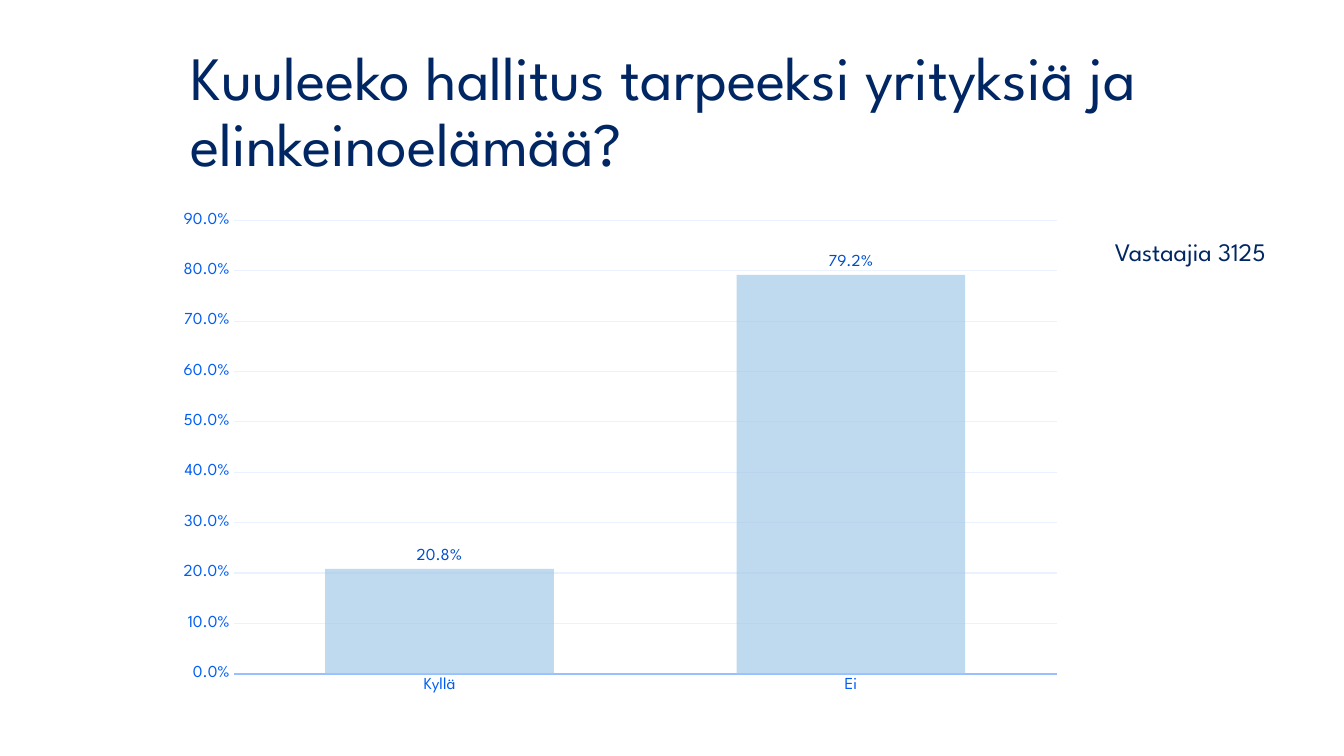
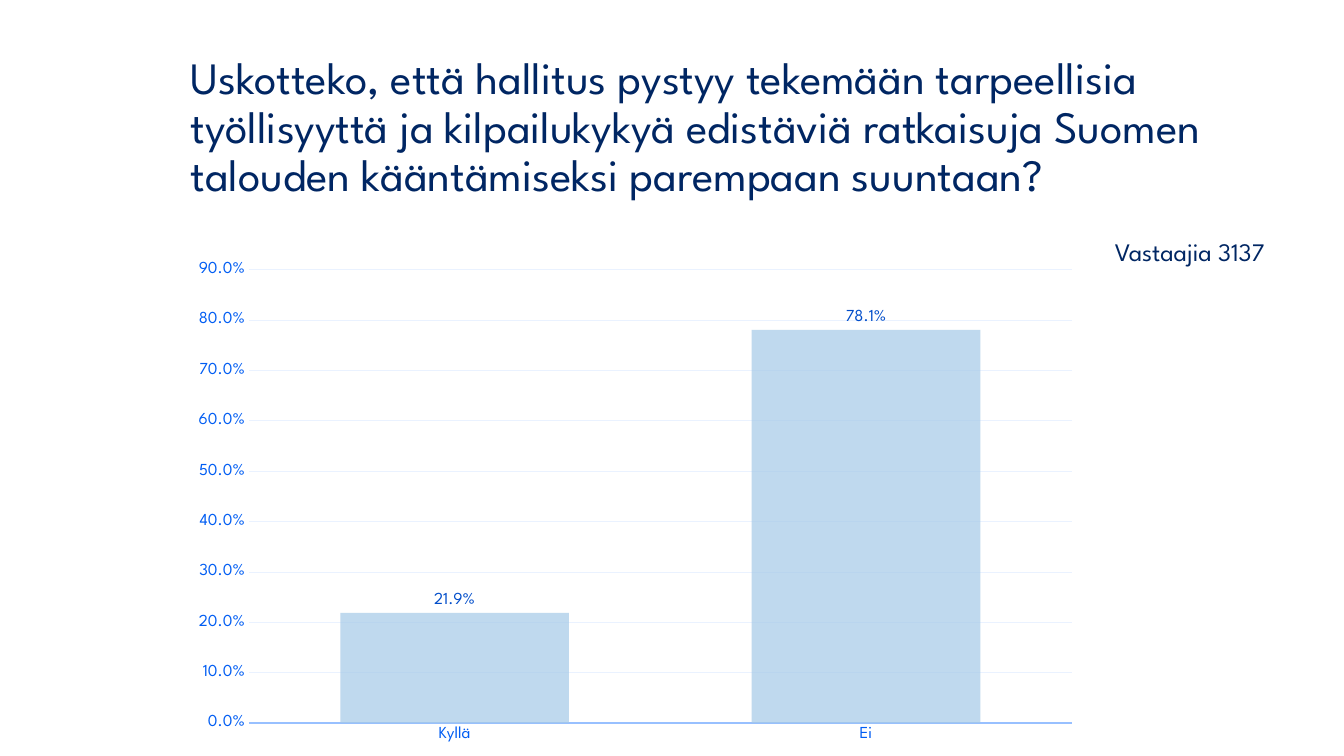
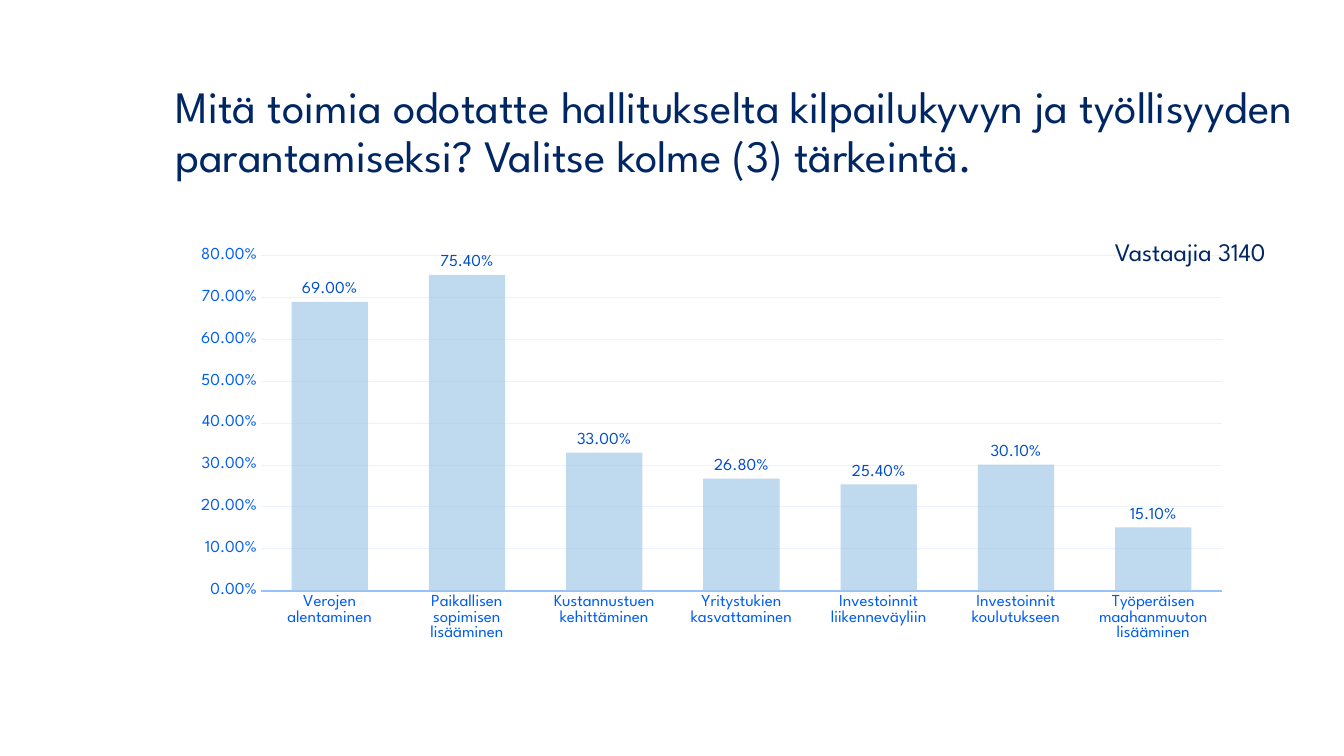
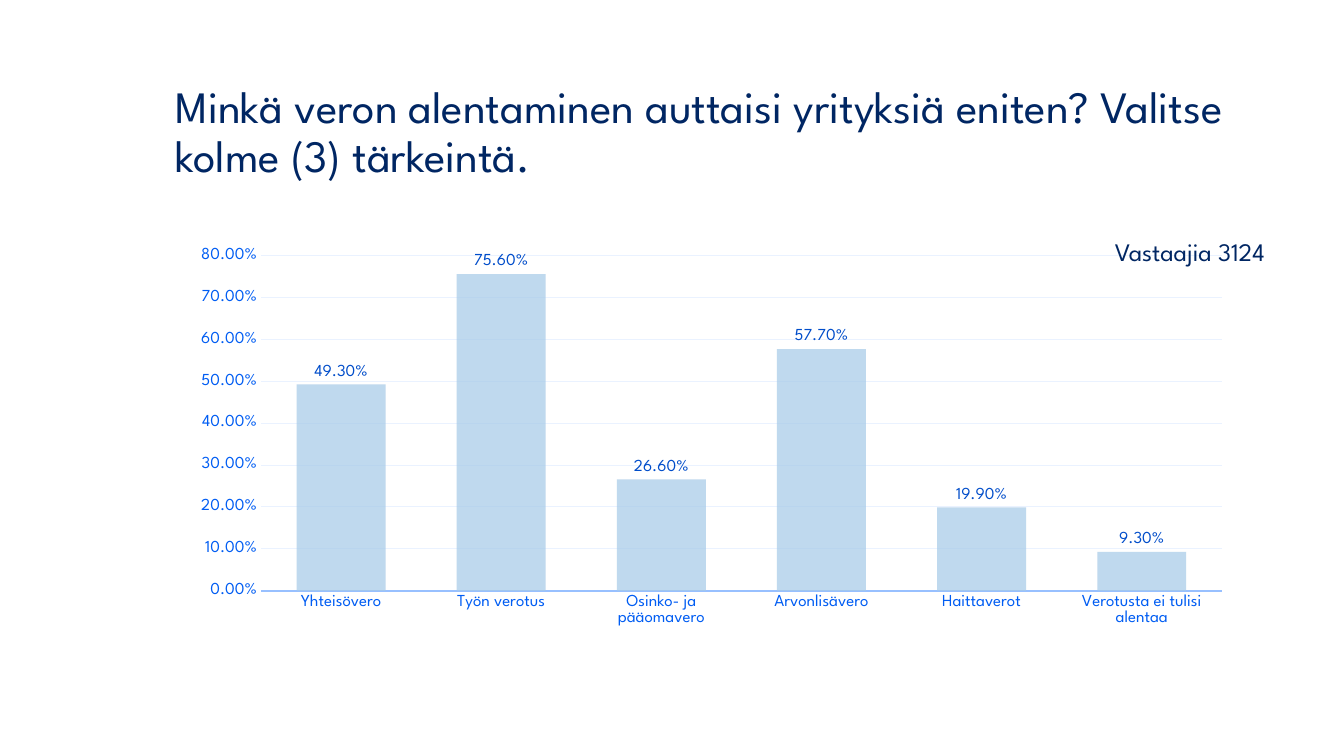
"""Build four survey slides, each with a question, a column chart and a count of answers."""
from lxml.etree import SubElement
from pptx import Presentation
from pptx.chart.data import CategoryChartData
from pptx.dml.color import RGBColor
from pptx.enum.chart import XL_CHART_TYPE, XL_LABEL_POSITION, XL_TICK_MARK
from pptx.enum.text import MSO_ANCHOR, MSO_AUTO_SIZE, PP_ALIGN
from pptx.oxml.ns import qn
from pptx.util import Pt

PX = 9144
FACE = "League Spartan"
HUES = {"text": "002663", "axis": "005DF3", "label": "004DCA",
        "base": "98C0FF", "grid": "EAF2FF", "bar": "A5C9E7"}
NOTE = (1096, 230, 198, 40)
WIDE = (164, 230, 1066, 494)
HEAD = (164, 60, 1135, 145)
PLOT = {"x": 0.089, "y": 0.048, "w": 0.894, "h": 0.673}

SLIDES = [
    {"title": "Kuuleeko hallitus tarpeeksi yrityksiä ja elinkeinoelämää?",
     "size": 44, "head": (179, 40, 1094, 145), "box": (164, 201, 902, 497),
     "count": 3125, "top": 0.9, "form": "0.0%", "plot": {},
     "data": {"Kyllä": 0.208, "Ei": 0.792}},
    {"title": "Uskotteko, että hallitus pystyy tekemään tarpeellisia työllisyyttä ja "
              "kilpailukykyä edistäviä ratkaisuja Suomen talouden kääntämiseksi "
              "parempaan suuntaan?",
     "size": 32, "head": (179, 55, 1094, 145), "box": (179, 250, 902, 497),
     "count": 3137, "top": 0.9, "form": "0.0%", "plot": {},
     "data": {"Kyllä": 0.219, "Ei": 0.781}},
    {"title": "Mitä toimia odotatte hallitukselta kilpailukyvyn ja työllisyyden "
              "parantamiseksi? Valitse kolme (3) tärkeintä.",
     "size": 32, "head": HEAD, "box": WIDE,
     "count": 3140, "top": 0.8, "form": "0.00%", "plot": PLOT,
     "data": {"Verojen alentaminen": 0.69,
              "Paikallisen sopimisen lisääminen": 0.754,
              "Kustannustuen kehittäminen": 0.33,
              "Yritystukien kasvattaminen": 0.268,
              "Investoinnit liikenneväyliin": 0.254,
              "Investoinnit koulutukseen": 0.301,
              "Työperäisen maahanmuuton lisääminen": 0.151}},
    {"title": "Minkä veron alentaminen auttaisi yrityksiä eniten? "
              "Valitse kolme (3) tärkeintä.",
     "size": 32, "head": HEAD, "box": WIDE,
     "count": 3124, "top": 0.8, "form": "0.00%", "plot": PLOT,
     "data": {"Yhteisövero": 0.493, "Työn verotus": 0.756,
              "Osinko- ja pääomavero": 0.266, "Arvonlisävero": 0.577,
              "Haittaverot": 0.199, "Verotusta ei tulisi alentaa": 0.093}},
]


def scale(box):
    return [n * PX for n in box]


def style(font, size, hue):
    font.name = FACE
    font.size = Pt(size)
    font.color.rgb = RGBColor.from_string(HUES[hue])


deck = Presentation()
deck.slide_width, deck.slide_height = scale((1333, 750))

for item in SLIDES:
    slide = deck.slides.add_slide(deck.slide_layouts[5])

    title = slide.shapes.title
    title.left, title.top, title.width, title.height = scale(item["head"])
    frame = title.text_frame
    frame.auto_size = MSO_AUTO_SIZE.NONE
    frame.vertical_anchor = MSO_ANCHOR.MIDDLE
    para = frame.paragraphs[0]
    para.alignment = PP_ALIGN.LEFT
    para.line_spacing = 0.9
    run = para.add_run()
    run.text = item["title"]
    style(run.font, item["size"], "text")

    data = CategoryChartData(number_format=item["form"])
    data.categories = list(item["data"])
    data.add_series("Series 1", list(item["data"].values()))
    chart = slide.shapes.add_chart(
        XL_CHART_TYPE.COLUMN_CLUSTERED, *scale(item["box"]), data).chart
    chart.has_title = False
    chart.has_legend = False
    style(chart.font, 10, "text")

    for axis in (chart.category_axis, chart.value_axis):
        axis.major_tick_mark = axis.minor_tick_mark = XL_TICK_MARK.NONE
        style(axis.tick_labels.font, 12, "axis")
    base = chart.category_axis.format.line
    base.width = Pt(1.25)
    base.color.rgb = RGBColor.from_string(HUES["base"])

    axis = chart.value_axis
    axis.minimum_scale, axis.maximum_scale, axis.major_unit = 0, item["top"], 0.1
    axis.format.line.fill.background()
    axis.tick_labels.number_format = item["form"]
    axis.tick_labels.number_format_is_linked = False
    grid = axis.major_gridlines.format.line
    grid.width = Pt(0.75)
    grid.color.rgb = RGBColor.from_string(HUES["grid"])

    plot = chart.plots[0]
    plot.gap_width, plot.overlap = 80, 25
    plot.vary_by_categories = False
    bars = plot.series[0]
    fill = bars.format.fill
    fill.solid()
    fill.fore_color.rgb = RGBColor.from_string(HUES["bar"])
    tint = bars.format.element.find(".//" + qn("a:srgbClr"))
    SubElement(tint, qn("a:alpha"), val="70000")

    labels = bars.data_labels
    labels.show_value = True
    labels.position = XL_LABEL_POSITION.OUTSIDE_END
    labels.number_format = item["form"]
    labels.number_format_is_linked = False
    style(labels.font, 12, "label")

    if item["plot"]:
        area = chart.element.find(".//" + qn("c:plotArea"))
        for old in area.findall(qn("c:layout")):
            area.remove(old)
        layout = SubElement(area, qn("c:layout"))
        area.insert(0, layout)
        manual = SubElement(layout, qn("c:manualLayout"))
        SubElement(manual, qn("c:layoutTarget"), val="inner")
        for key in "xy":
            SubElement(manual, qn(f"c:{key}Mode"), val="edge")
        for key, part in item["plot"].items():
            SubElement(manual, qn(f"c:{key}"), val=str(part))

    note = slide.shapes.add_textbox(*scale(NOTE)).text_frame
    note.word_wrap = False
    note.auto_size = MSO_AUTO_SIZE.SHAPE_TO_FIT_TEXT
    run = note.paragraphs[0].add_run()
    run.text = f"Vastaajia {item['count']}"
    style(run.font, 18, "text")

deck.save("out.pptx")
